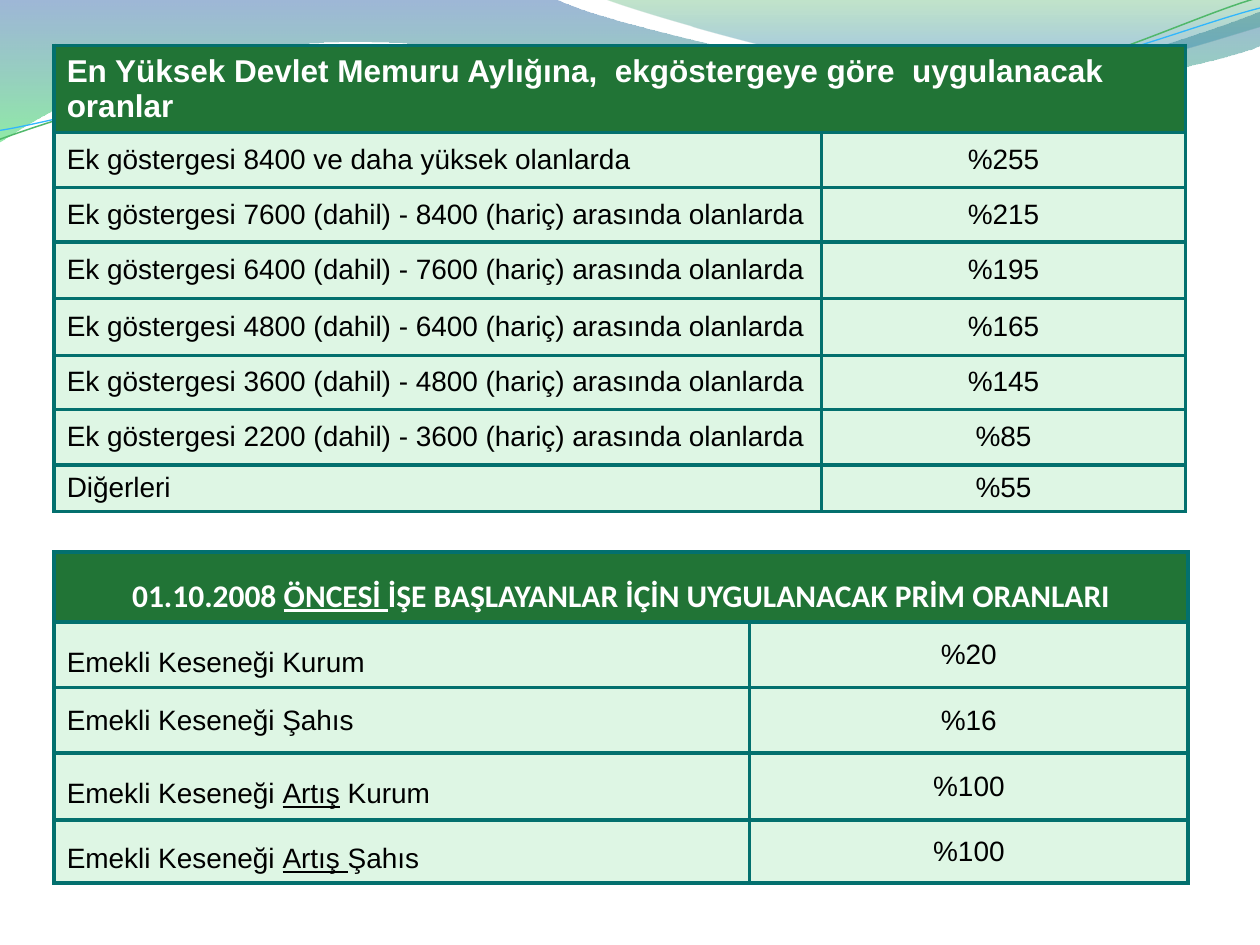
from dataclasses import dataclass

from lxml.etree import SubElement
from pptx import Presentation
from pptx.dml.color import RGBColor as Rgb
from pptx.enum.text import MSO_ANCHOR as Anchor, PP_ALIGN as Align
from pptx.oxml.ns import qn
from pptx.util import Inches, Pt


@dataclass(frozen=True)
class Theme:
    head: str = "217436"
    body: str = "DEF6E4"
    edge: str = "03706E"
    light: str = "FFFFFF"
    dark: str = "000000"
    blue: str = "2960A7"
    mint: str = "35DA5E"
    leaf: str = "36A752"
    sky: str = "2472D3"
    green: str = "50B86A"
    cyan: str = "31B6FD"
    font: str = "Arial"
    big: int = 18
    small: int = 16
    rule: float = 2.25


THEME = Theme()
TILT = 357.3

# A path is a list of parts: 2 numbers for a line, 6 for a Bezier curve.
LEFT_WAVE = [
    (0, 0), (4.4, -0.01),
    (4.76, 0.17, 6.64, 0.63, 7.58, 0.63), (8.53, 0.63, 9.58, 0.26, 10, 0.09),
    (10.01, 0.36),
    (9.83, 0.44, 8.7, 0.76, 7.46, 0.75), (6.22, 0.75, 3.82, 0.28, 2.57, 0.34),
    (1.29, 0.36, 0.46, 0.83, -0.01, 1.13), (0, 0),
]
RIGHT_WAVE = [
    (4.79, -0.01),
    (5.09, 0.11, 6.82, 0.62, 7.69, 0.65), (8.56, 0.69, 9.61, 0.32, 10, 0.21),
    (10, 0), (4.79, -0.01),
]
# The two lines are given level; TILT turns them afterwards.
GREEN_LINE = [
    (-0.02, 0.87),
    (0.47, 0.72, 1.58, 0.41, 2.78, 0.42), (3.96, 0.42, 5.91, 0.93, 7.12, 0.9),
    (8.32, 0.87, 9.4, 0.36, 10, 0.22),
]
CYAN_LINE = [
    (-0.02, 0.8),
    (0.46, 0.75, 1.64, 0.45, 2.83, 0.46), (4.03, 0.46, 5.96, 0.88, 7.16, 0.85),
    (8.35, 0.83, 9.42, 0.42, 10.02, 0.3),
]

# Underlined words stand between underscores.
RATE_HEAD = "En Yüksek Devlet Memuru Aylığına,  ekgöstergeye göre  uygulanacak oranlar"
BANDS = [(7600, 8400, 215), (6400, 7600, 195), (4800, 6400, 165),
         (3600, 4800, 145), (2200, 3600, 85)]
RATES = [
    ("Ek göstergesi 8400 ve daha yüksek olanlarda", "%255"),
    *((f"Ek göstergesi {low} (dahil) - {high} (hariç) arasında olanlarda", f"%{rate}")
      for low, high, rate in BANDS),
    ("Diğerleri", "%55"),
]
DUES_HEAD = "01.10.2008 _ÖNCESİ _İŞE BAŞLAYANLAR İÇİN UYGULANACAK PRİM ORANLARI"
DUES = [
    ("Emekli Keseneği Kurum", "%20", 1.5),
    ("Emekli Keseneği Şahıs", "%16"),
    ("Emekli Keseneği _Artış_ Kurum", "%100", 1.5),
    ("Emekli Keseneği _Artış _Şahıs", "%100", 1.5),
]


def bend(shape, path):
    """Join the three line segments of each curve into one Bezier segment."""
    lines = iter(list(shape._element.iter(qn("a:lnTo"))))
    for part in path[1:]:
        curve = next(lines)
        if len(part) == 6:
            curve.tag = qn("a:cubicBezTo")
            for _ in range(2):
                extra = next(lines)
                curve.append(extra[0])
                extra.getparent().remove(extra)


def add_path(slide, path, close):
    first, *rest = [(Inches(x), Inches(y)) for part in path
                    for x, y in zip(part[::2], part[1::2])]
    pen = slide.shapes.build_freeform(*first)
    pen.add_line_segments(rest, close=close)
    shape = pen.convert_to_shape()
    bend(shape, path)
    shape.shadow.inherit = False
    return shape


def add_wave(slide, path, stops):
    """Fill a shape from top to bottom; a stop is place, colour, opacity in %."""
    shape = add_path(slide, path, True)
    shape.line.fill.background()
    fill = shape.fill
    fill.gradient()
    fill.gradient_angle = 270
    for stop, (place, color, _) in zip(fill.gradient_stops, stops):
        stop.position = place
        stop.color.rgb = Rgb.from_string(color)
    for tag, (_, _, alpha) in zip(shape._element.iter(qn("a:gs")), stops):
        SubElement(tag[0], qn("a:alpha"), val=str(alpha * 1000))


def add_line(slide, path, color, width):
    shape = add_path(slide, path, False)
    shape.rotation = TILT
    shape.fill.background()
    shape.line.color.rgb = Rgb.from_string(color)
    shape.line.width = Pt(width)


def set_edges(cell):
    props = cell._tc.get_or_add_tcPr()
    for side in ("lnL", "lnR", "lnT", "lnB"):
        line = SubElement(props, qn(f"a:{side}"), w=str(Pt(THEME.rule)))
        fill = SubElement(line, qn("a:solidFill"))
        SubElement(fill, qn("a:srgbClr"), val=THEME.edge)


def paint(cell, color):
    set_edges(cell)
    cell.fill.solid()
    cell.fill.fore_color.rgb = Rgb.from_string(color)


def write(cell, text, align=Align.LEFT, space=None, head=False, face=THEME.font):
    cell.vertical_anchor = Anchor.MIDDLE
    para = cell.text_frame.paragraphs[0]
    para.alignment = align
    para.line_spacing = space
    font = para.font
    font.name = face
    font.size = Pt(THEME.big if head else THEME.small)
    font.bold = head
    font.color.rgb = Rgb.from_string(THEME.light if head else THEME.dark)
    for turn, piece in enumerate(text.split("_")):
        run = para.add_run()
        run.text = piece
        if turn % 2:
            run.font.underline = True


def add_grid(slide, top, widths, heights, rows):
    """Add a table with an empty, merged head row; return the head cell."""
    frame = slide.shapes.add_table(len(heights), len(widths), Inches(0.43), Inches(top),
                                   Inches(sum(widths)), Inches(sum(heights)))
    table = frame.table
    for col, width in zip(table.columns, widths):
        col.width = Inches(width)
    for row, height in zip(table.rows, heights):
        row.height = Inches(height)
    head = table.cell(0, 0)
    head.merge(table.cell(0, 1))
    for cell in table.rows[0].cells:
        paint(cell, THEME.head)
    for index, (label, rate, *space) in enumerate(rows, 1):
        left, right = table.rows[index].cells
        paint(left, THEME.body)
        paint(right, THEME.body)
        write(left, label, space=space[0] if space else None)
        write(right, rate, Align.CENTER)
    return head


def main():
    deck = Presentation()
    deck.slide_width, deck.slide_height = Inches(10), Inches(7.5)
    slide = deck.slides.add_slide(deck.slide_layouts[6])

    add_wave(slide, LEFT_WAVE, [(0, THEME.blue, 45), (1, THEME.mint, 55)])
    add_wave(slide, RIGHT_WAVE, [(0, THEME.leaf, 30), (0.8, THEME.sky, 45)])
    add_line(slide, GREEN_LINE, THEME.green, 0.85)
    add_line(slide, CYAN_LINE, THEME.cyan, 0.75)

    head = add_grid(slide, 0.36, [6.09, 2.89],
                    [0.69, 0.44, 0.43, 0.45, 0.45, 0.43, 0.44, 0.37], RATES)
    write(head, RATE_HEAD, head=True)

    head = add_grid(slide, 4.38, [5.52, 3.48], [0.55, 0.52, 0.52, 0.53, 0.5], DUES)
    write(head, DUES_HEAD, Align.CENTER, 1.5, head=True, face="Calibri")
    head.vertical_anchor = Anchor.TOP

    deck.save("out.pptx")


if __name__ == "__main__":
    main()
